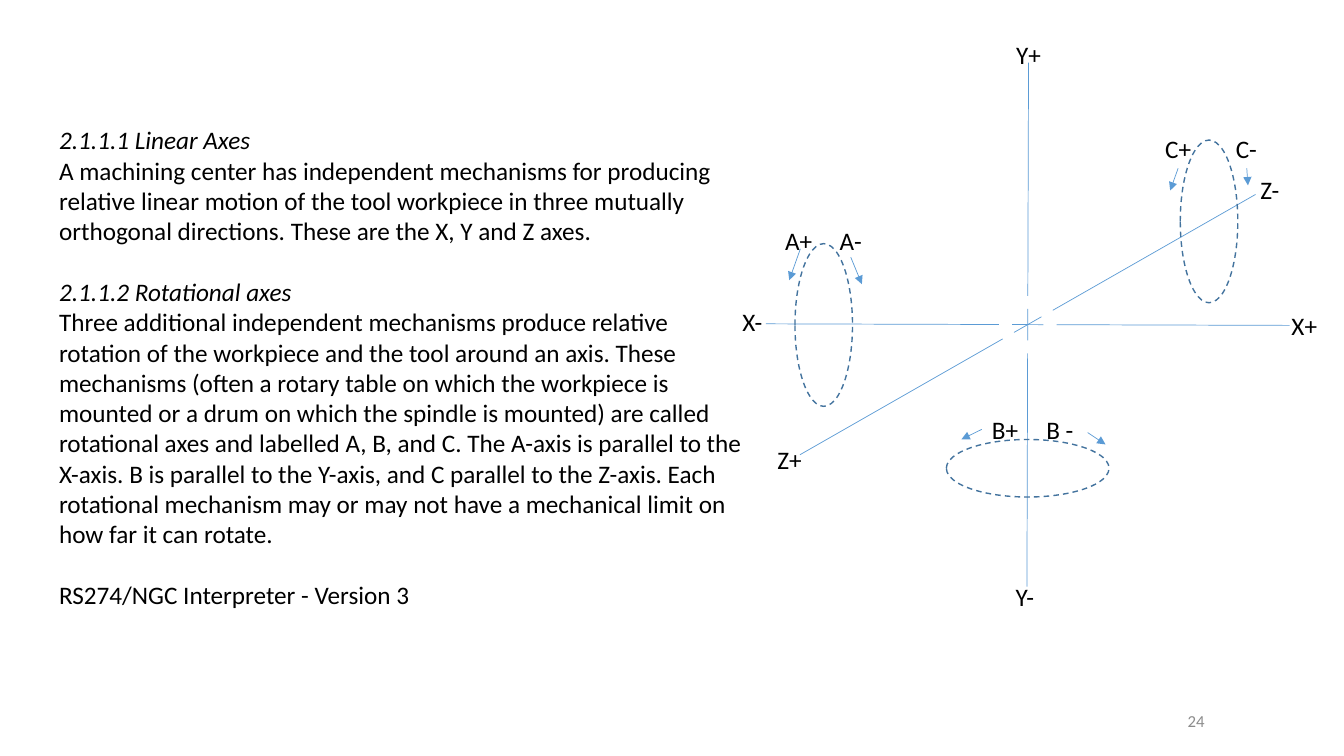
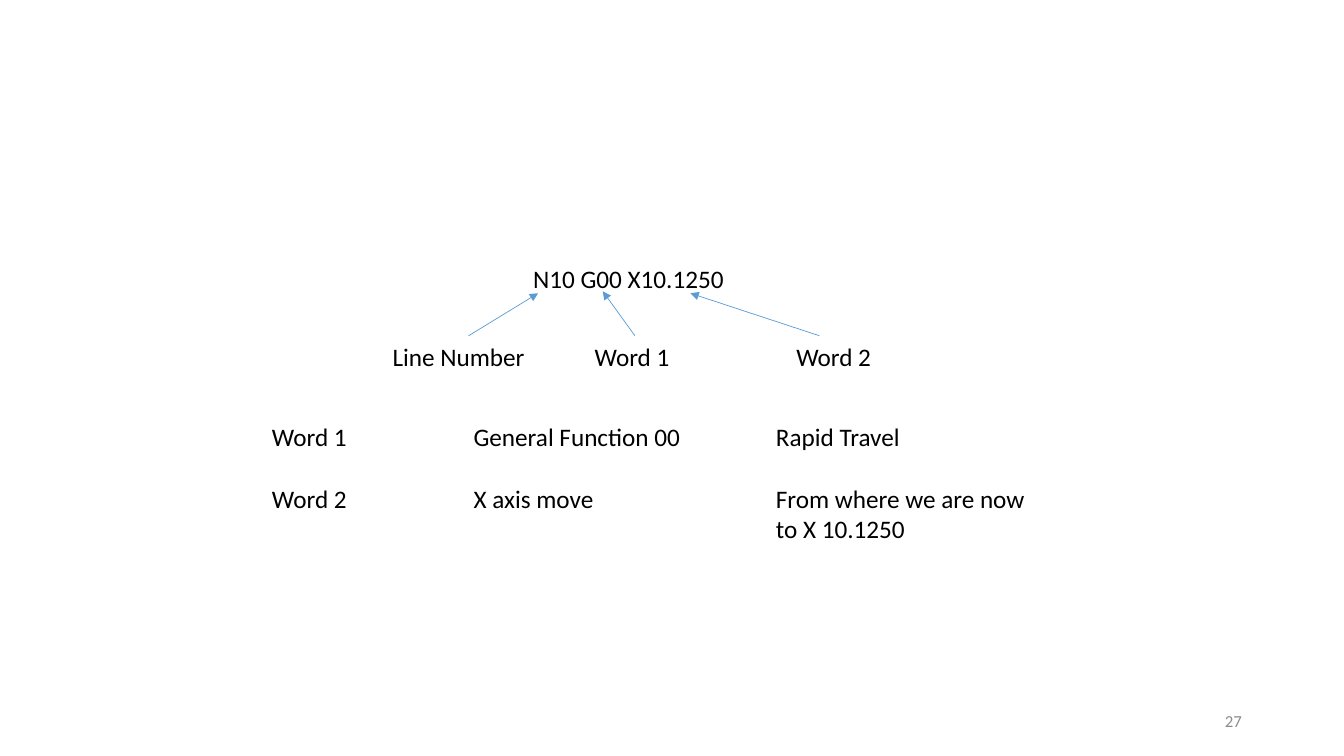
"""Two slides on machining axes and the structure of a program block."""
from lxml import etree
from pptx import Presentation
from pptx.dml.color import RGBColor
from pptx.enum.dml import MSO_LINE
from pptx.enum.shapes import MSO_CONNECTOR, MSO_SHAPE
from pptx.enum.text import MSO_ANCHOR, PP_ALIGN
from pptx.oxml.ns import qn
from pptx.util import Cm, Pt

STRAIGHT = MSO_CONNECTOR.STRAIGHT
OVAL = MSO_SHAPE.OVAL
DASH = MSO_LINE.DASH
MIDDLE = MSO_ANCHOR.MIDDLE
LEFT, CENTER, RIGHT = PP_ALIGN.LEFT, PP_ALIGN.CENTER, PP_ALIGN.RIGHT

COLORS = {"text": "000000", "number": "8C8C8C", "line": "5B9BD5", "rotation": "43739E"}
FONT = "Calibri"
TEXT_SIZE, NUMBER_SIZE, SECTION_GAP = 18, 12, 22
LABEL_WIDTH, LABEL_HEIGHT = 1.2, 1.02

AXES_TEXT = [
    ("2.1.1.1 Linear Axes", True, 0),
    ("A machining center has independent mechanisms for producing relative linear motion "
     "of the tool workpiece in three mutually orthogonal directions. These are the X, Y "
     "and Z axes.", False, 0),
    ("2.1.1.2 Rotational axes", True, SECTION_GAP),
    ("Three additional independent mechanisms produce relative rotation of the workpiece "
     "and the tool around an axis. These mechanisms (often a rotary table on which the "
     "workpiece is mounted or a drum on which the spindle is mounted) are called "
     "rotational axes and labelled A, B, and C. The A-axis is parallel to the X-axis. B is "
     "parallel to the Y-axis, and C parallel to the Z-axis. Each rotational mechanism may "
     "or may not have a mechanical limit on how far it can rotate.", False, 0),
    ("RS274/NGC Interpreter - Version 3", False, SECTION_GAP),
]

ORIGIN = (25.9, 8.18)
HALF_AXES = {"X": (6.6, 0.02), "Y": (0.02, -6.6), "Z": (5.74, -3.28)}
AXIS_SEGMENTS = [(-1, -0.11), (-0.06, 0.06), (0.11, 1)]
AXIS_LABELS = [
    ("X-", 18.96, 8.1), ("X+", 32.87, 8.2),
    ("Y+", 25.92, 1.37), ("Y-", 25.83, 15.04),
    ("Z+", 19.9, 11.58), ("Z-", 32, 4.78),
    ("A+", 20.13, 6.05), ("A-", 21.44, 6.05),
    ("B+", 25.33, 10.82), ("B -", 26.71, 10.82),
    ("C+", 29.69, 3.73), ("C-", 31.41, 3.73),
]
LONG, SHORT = 4.1, 1.45
ROTATIONS = [
    (20.76, 8.19, SHORT, LONG),
    (25.9, 11.8, LONG, SHORT),
    (30.47, 5.58, SHORT, LONG),
]
ROTATION_ARROWS = [
    ((20.17, 6.27), (19.89, 7.06)), ((21.44, 6.48), (21.72, 7.16)),
    ((24.74, 10.82), (24.23, 11.07)), ((27.41, 10.9), (27.86, 11.2)),
    ((29.69, 4.24), (29.49, 4.8)), ((31.42, 4.24), (31.45, 4.67)),
]

BLOCK_LABELS = [
    ("N10 G00 X10.1250", 15.84, 7.01, 5.5),
    ("Line Number", 11.56, 8.97, 4),
    ("Word 1", 15.93, 8.97, 2.5),
    ("Word 2", 21.01, 8.97, 2.5),
]
BLOCK_ARROWS = [
    ((11.81, 8.46), (13.56, 7.39)),
    ((16, 8.46), (15.19, 7.34)),
    ((20.65, 8.46), (17.4, 7.39)),
]
WORD_ROWS = [
    ("Word 1", "General Function 00", "Rapid Travel"),
    ("Word 2", "X axis move", "From where we are now to X 10.1250"),
]
WORD_COLUMNS = [5.08, 7.62, 7]
WORD_ROW_HEIGHTS = [1.55, 1.8]


def color(name):
    return RGBColor.from_string(COLORS[name])


def format_paragraph(paragraph, size=TEXT_SIZE, color_name="text", align=LEFT, italic=False):
    paragraph.alignment = align
    for run in paragraph.runs:
        run.font.name = FONT
        run.font.size = Pt(size)
        run.font.italic = italic
        run.font.color.rgb = color(color_name)


def add_text(slide, text, left, top, width, height, **style):
    frame = slide.shapes.add_textbox(Cm(left), Cm(top), Cm(width), Cm(height)).text_frame
    frame.word_wrap = True
    frame.vertical_anchor = MIDDLE
    frame.text = text
    format_paragraph(frame.paragraphs[0], **style)
    return frame


def add_label(slide, text, center_x, center_y, width=LABEL_WIDTH):
    frame = add_text(slide, text, center_x - width / 2, center_y - LABEL_HEIGHT / 2,
                     width, LABEL_HEIGHT, align=CENTER)
    frame.word_wrap = False


def add_line(slide, start, end, arrow=False):
    connector = slide.shapes.add_connector(STRAIGHT, *(Cm(value) for value in (*start, *end)))
    connector.line.color.rgb = color("line")
    connector.line.width = Pt(0.5)
    if arrow:
        etree.SubElement(connector.line._get_or_add_ln(), qn("a:tailEnd"), type="triangle")
    etree.SubElement(connector._element.spPr, qn("a:effectLst"))


def add_rotation(slide, center_x, center_y, width, height):
    ellipse = slide.shapes.add_shape(OVAL, Cm(center_x - width / 2), Cm(center_y - height / 2),
                                     Cm(width), Cm(height))
    ellipse.shadow.inherit = False
    ellipse.fill.background()
    ellipse.line.color.rgb = color("rotation")
    ellipse.line.width = Pt(1)
    ellipse.line.dash_style = DASH


def add_numbered_slide(presentation, number, number_left):
    slide = presentation.slides.add_slide(presentation.slide_layouts[6])
    add_text(slide, number, number_left, 17.65, 7.62, 1.02,
             size=NUMBER_SIZE, color_name="number", align=RIGHT)
    return slide


def build_axes_slide(presentation):
    slide = add_numbered_slide(presentation, "24", 22.99)
    frame = slide.shapes.add_textbox(Cm(1.24), Cm(3.02), Cm(17.81), Cm(12.57)).text_frame
    frame.word_wrap = True
    for index, (text, italic, gap) in enumerate(AXES_TEXT):
        paragraph = frame.add_paragraph() if index else frame.paragraphs[0]
        paragraph.text = text
        paragraph.space_before = Pt(gap)
        format_paragraph(paragraph, italic=italic)
    for half_axis in HALF_AXES.values():
        for segment in AXIS_SEGMENTS:
            add_line(slide, *([origin + part * reach for origin, reach in zip(ORIGIN, half_axis)]
                              for part in segment))
    for rotation in ROTATIONS:
        add_rotation(slide, *rotation)
    for label in AXIS_LABELS:
        add_label(slide, *label)
    for start, end in ROTATION_ARROWS:
        add_line(slide, start, end, arrow=True)


def build_block_slide(presentation):
    slide = add_numbered_slide(presentation, "27", 23.93)
    for label in BLOCK_LABELS:
        add_label(slide, *label)
    for start, end in BLOCK_ARROWS:
        add_line(slide, start, end, arrow=True)
    table = slide.shapes.add_table(
        len(WORD_ROWS), len(WORD_COLUMNS), Cm(6.6), Cm(10.52),
        Cm(sum(WORD_COLUMNS)), Cm(sum(WORD_ROW_HEIGHTS))).table
    table.first_row = False
    table.horz_banding = False
    for column, width in zip(table.columns, WORD_COLUMNS):
        column.width = Cm(width)
    for row, height, texts in zip(table.rows, WORD_ROW_HEIGHTS, WORD_ROWS):
        row.height = Cm(height)
        for cell, text in zip(row.cells, texts):
            cell.fill.background()
            cell.text = text
            format_paragraph(cell.text_frame.paragraphs[0])


def main():
    presentation = Presentation()
    presentation.slide_width = Cm(33.87)
    presentation.slide_height = Cm(19.05)
    build_axes_slide(presentation)
    build_block_slide(presentation)
    presentation.save("out.pptx")


if __name__ == "__main__":
    main()
